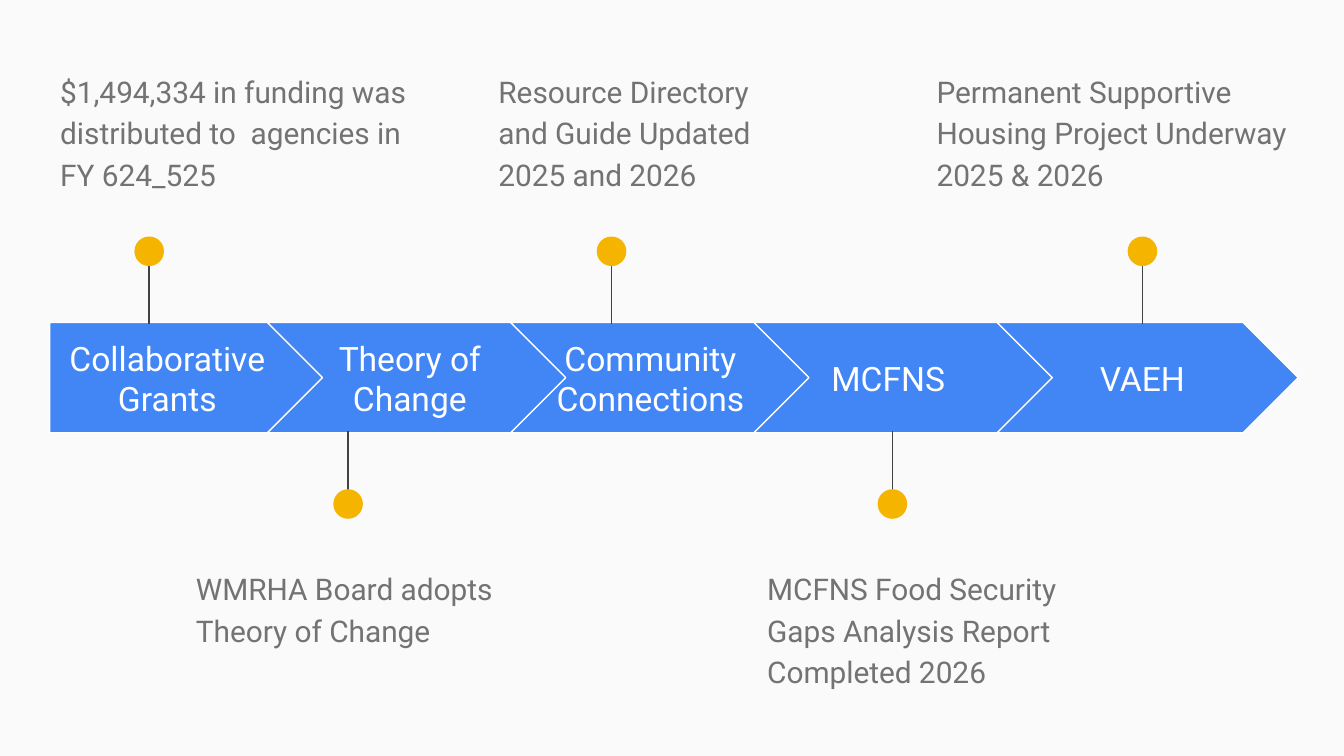
from dataclasses import dataclass

from lxml import etree
from pptx import Presentation
from pptx.dml.color import RGBColor
from pptx.enum.shapes import MSO_CONNECTOR, MSO_SHAPE
from pptx.enum.text import MSO_ANCHOR, PP_ALIGN
from pptx.oxml.ns import qn
from pptx.util import Inches, Pt

PENTAGON, CHEVRON, OVAL = MSO_SHAPE.PENTAGON, MSO_SHAPE.CHEVRON, MSO_SHAPE.OVAL
STRAIGHT = MSO_CONNECTOR.STRAIGHT
TOP, MIDDLE = MSO_ANCHOR.TOP, MSO_ANCHOR.MIDDLE
LEFT, CENTER = PP_ALIGN.LEFT, PP_ALIGN.CENTER

BACKGROUND = RGBColor(0xFA, 0xFA, 0xFA)
BLUE = RGBColor(0x42, 0x85, 0xF4)
YELLOW = RGBColor(0xF4, 0xB4, 0x00)
WHITE = RGBColor(0xFF, 0xFF, 0xFF)
GRAY = RGBColor(0x73, 0x73, 0x73)
DARK = RGBColor(0x42, 0x42, 0x42)
FONT = "Roboto"

BAND_TOP, BAND_HEIGHT = 2.4, 0.82
FIRST_LEFT, FIRST_WIDTH = 0.37, 2.05
CHEVRON_LEFT, CHEVRON_WIDTH, CHEVRON_STEP = 1.99, 2.24, 1.81
LABEL_OFFSET, LABEL_HEIGHT = 0.16, 0.51
PIN_LENGTH, PIN_OVERLAP = 0.61, 0.01
DOT_SIZE, DOT_INSET = 0.22, 0.07
NOTE_ABOVE, NOTE_BELOW = 0.41, 4.11


@dataclass
class Stage:
    """One stage of the timeline with its label, pin and note."""
    label: str
    label_left: float
    label_width: float
    pin_x: float
    note: str
    note_left: float
    note_width: float = 2.45
    note_height: float = 0.99


STAGES = [
    Stage("Collaborative\nGrants", 0.37, 1.75, 1.11,
          "$1,494,334 in funding was distributed to  agencies in FY 624_525",
          0.35, 2.84, 1.11),
    Stage("Theory of Change", 2.33, 1.44, 2.59,
          "WMRHA Board adopts Theory of Change", 1.36),
    Stage("Community\nConnections", 3.97, 1.74, 4.55,
          "Resource Directory and Guide Updated 2025 and 2026", 3.61),
    Stage("MCFNS ", 5.92, 1.44, 6.64,
          "MCFNS Food Security Gaps Analysis Report Completed 2026", 5.61),
    Stage("VAEH", 7.78, 1.44, 8.5,
          "Permanent Supportive Housing Project Underway 2025 & 2026", 6.87, 2.89),
]


def add_text(slide, box, text, size, color, alignment=LEFT, anchor=TOP):
    """Add a wrapping text box and return its paragraphs."""
    frame = slide.shapes.add_textbox(*map(Inches, box)).text_frame
    frame.word_wrap = True
    frame.vertical_anchor = anchor
    frame.margin_left = frame.margin_right = Inches(0.1)
    frame.margin_top = frame.margin_bottom = Inches(0.1)
    frame.text = text
    for paragraph in frame.paragraphs:
        paragraph.alignment = alignment
        paragraph.font.name = FONT
        paragraph.font.size = Pt(size)
        paragraph.font.color.rgb = color
    return frame.paragraphs


def add_filled_shape(slide, kind, box, color):
    """Add a flat preset shape with a solid fill."""
    shape = slide.shapes.add_shape(kind, *map(Inches, box))
    shape.shadow.inherit = False
    shape.fill.solid()
    shape.fill.fore_color.rgb = color
    return shape


def add_arrow(slide, kind, box):
    """Add one blue arrow of the band."""
    arrow = add_filled_shape(slide, kind, box, BLUE)
    arrow.adjustments[0] = 0.5
    arrow.line.color.rgb = WHITE
    arrow.line.width = Pt(0.75)


def add_pin(slide, x, edge, direction):
    """Add a line from a band edge, up (-1) or down (1), ending in a dot."""
    base = edge - direction * PIN_OVERLAP
    tip = base + direction * PIN_LENGTH
    line = slide.shapes.add_connector(STRAIGHT, *map(Inches, (x, tip, x, base)))
    line.line.color.rgb = DARK
    line.line.width = Pt(0.75)
    etree.SubElement(line._element.spPr, qn("a:effectLst"))
    radius = DOT_SIZE / 2
    dot_top = tip - direction * DOT_INSET - radius
    dot = add_filled_shape(
        slide, OVAL, (x - radius, dot_top, DOT_SIZE, DOT_SIZE), YELLOW)
    dot.line.fill.background()


def add_note(slide, box, text):
    """Add the description of a stage."""
    for paragraph in add_text(slide, box, text, 16, GRAY):
        paragraph.line_spacing = 1.15
        paragraph.space_after = Pt(16)


def add_stage(slide, index, stage):
    """Add a stage, with notes alternating above and below the band."""
    if index == 0:
        kind, left, width = PENTAGON, FIRST_LEFT, FIRST_WIDTH
    else:
        kind, width = CHEVRON, CHEVRON_WIDTH
        left = CHEVRON_LEFT + (index - 1) * CHEVRON_STEP
    add_arrow(slide, kind, (left, BAND_TOP, width, BAND_HEIGHT))
    label_box = (stage.label_left, BAND_TOP + LABEL_OFFSET,
                 stage.label_width, LABEL_HEIGHT)
    add_text(slide, label_box, stage.label, 18, WHITE, CENTER, MIDDLE)
    if index % 2 == 0:
        edge, direction, note_top = BAND_TOP, -1, NOTE_ABOVE
    else:
        edge, direction, note_top = BAND_TOP + BAND_HEIGHT, 1, NOTE_BELOW
    add_pin(slide, stage.pin_x, edge, direction)
    note_box = (stage.note_left, note_top, stage.note_width, stage.note_height)
    add_note(slide, note_box, stage.note)


def main():
    """Build the timeline slide and save it."""
    presentation = Presentation()
    presentation.slide_width = Inches(10)
    presentation.slide_height = Inches(10 * 9 / 16)
    slide = presentation.slides.add_slide(presentation.slide_layouts[6])
    slide.background.fill.solid()
    slide.background.fill.fore_color.rgb = BACKGROUND
    for index, stage in enumerate(STAGES):
        add_stage(slide, index, stage)
    presentation.save("out.pptx")


if __name__ == "__main__":
    main()
